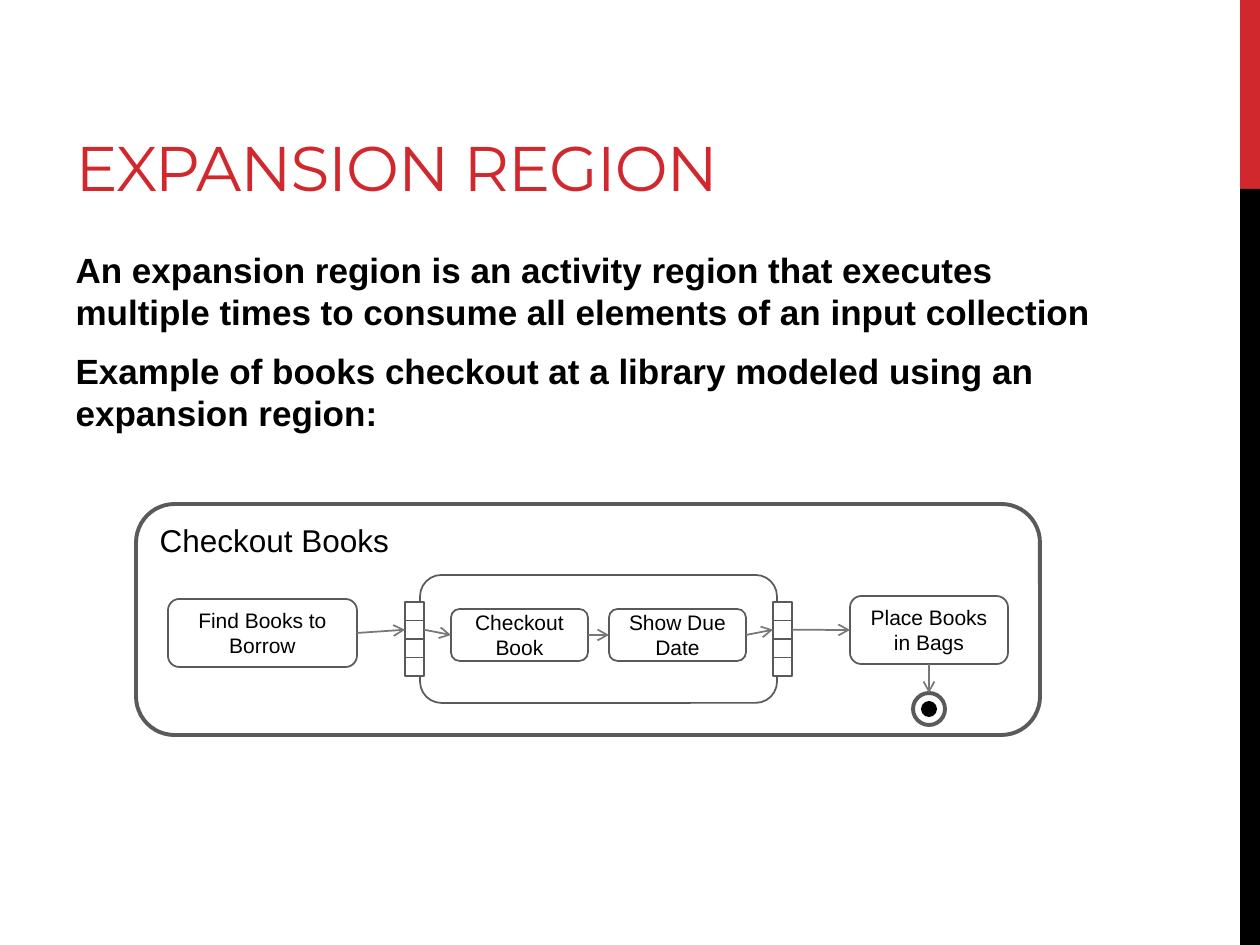
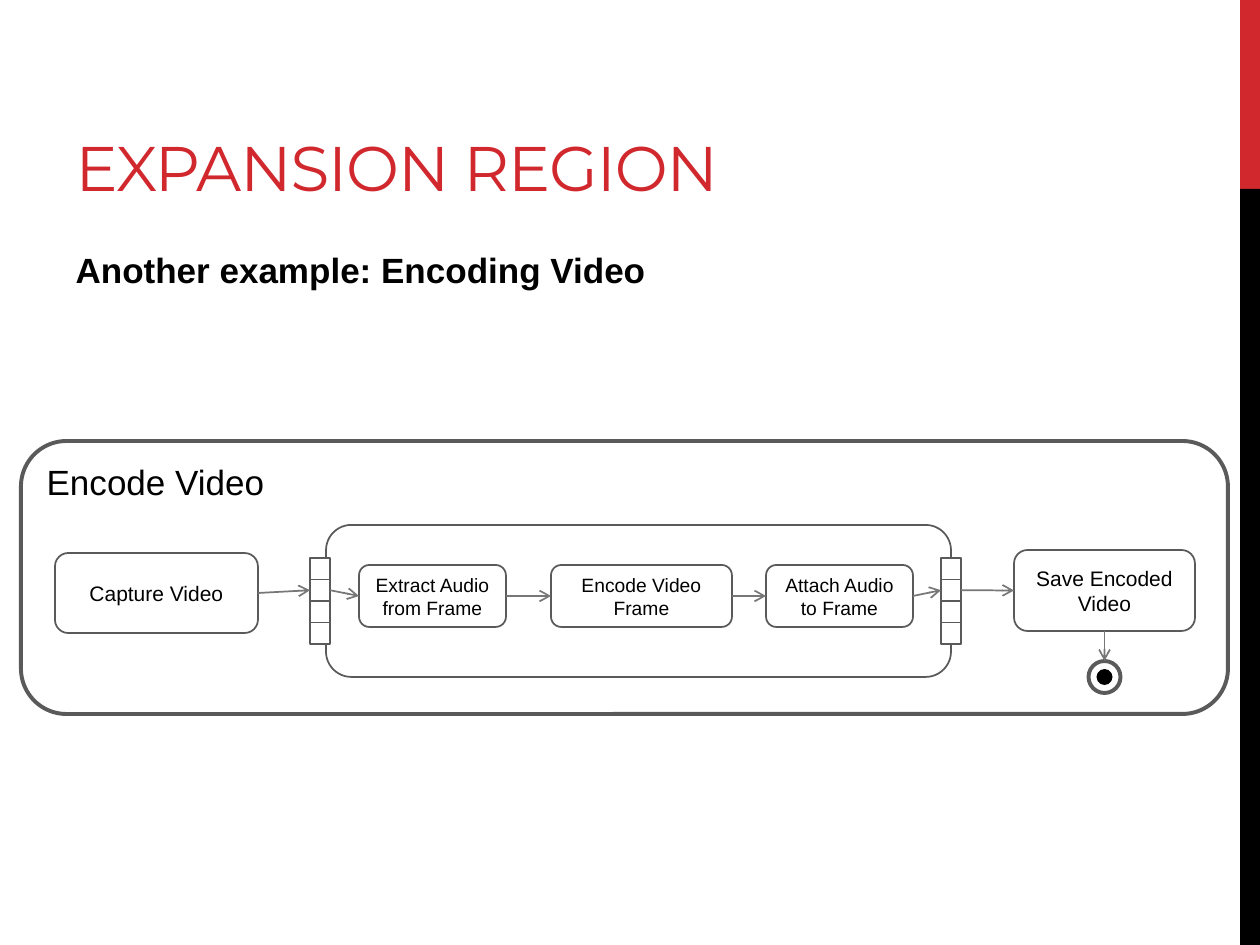
from dataclasses import dataclass
from itertools import pairwise

from lxml import etree
from pptx import Presentation
from pptx.dml.color import RGBColor
from pptx.enum.shapes import MSO_CONNECTOR, MSO_SHAPE
from pptx.enum.text import MSO_ANCHOR, MSO_AUTO_SIZE, PP_ALIGN
from pptx.oxml.ns import qn
from pptx.shapes.autoshape import Shape
from pptx.slide import Slide
from pptx.util import Emu, Pt

RED = RGBColor(0xD1, 0x28, 0x2E)
BLACK = RGBColor(0, 0, 0)
WHITE = RGBColor(0xFF, 0xFF, 0xFF)
OUTLINE = RGBColor(0x5A, 0x5A, 0x5A)
ARROW = RGBColor(0x77, 0x77, 0x77)

RECTANGLE = MSO_SHAPE.RECTANGLE
ROUNDED = MSO_SHAPE.ROUNDED_RECTANGLE
ELLIPSE = MSO_SHAPE.OVAL
STRAIGHT = MSO_CONNECTOR.STRAIGHT
TOP, MIDDLE, BOTTOM = MSO_ANCHOR.TOP, MSO_ANCHOR.MIDDLE, MSO_ANCHOR.BOTTOM
LEFT, CENTER = PP_ALIGN.LEFT, PP_ALIGN.CENTER
NO_FIT = MSO_AUTO_SIZE.NONE

TOP_SIDE, LEFT_SIDE, BOTTOM_SIDE, RIGHT_SIDE = range(4)
HEAVY, THIN = 2.25, 1
PIN_COUNT = 4
JOINED_PIN = 1
RING_SIZE, DOT_SIZE = 32, 16
TITLE = "EXPANSION REGION"
TITLE_FONT, TEXT_FONT = "Montserrat", "Arial"


@dataclass(frozen=True)
class Area:
    left: float
    top: float
    width: float
    height: float

    def emu(self) -> tuple[Emu, ...]:
        return tuple(px(v) for v in (self.left, self.top, self.width, self.height))


@dataclass(frozen=True)
class Action:
    label: str
    area: Area


@dataclass(frozen=True)
class Diagram:
    label: str
    label_size: int
    frame: Area
    source: Action
    region: Area
    input_pins: Area
    output_pins: Area
    steps: tuple[Action, ...]
    step_size: int
    target: Action
    ring_top: int


@dataclass(frozen=True)
class Content:
    statements: tuple[str, ...]
    body: Area
    diagram: Diagram


TITLE_AREA = Area(63, 21, 955, 189)
SIDE_BANDS = ((Area(1240, 0, 20, 189), RED), (Area(1240, 189, 20, 756), BLACK))

CONTENTS = (
    Content(
        (
            "An expansion region is an activity region that executes multiple times "
            "to consume all elements of an input collection",
            "Example of books checkout at a library modeled using an expansion region:",
        ),
        Area(63, 242, 1050, 168),
        Diagram(
            label="Checkout Books",
            label_size=18,
            frame=Area(136, 504, 904, 231),
            source=Action("Find Books to Borrow", Area(168, 599, 189, 68)),
            region=Area(420, 575, 357, 128),
            input_pins=Area(405, 602, 19, 74),
            output_pins=Area(773, 602, 19, 74),
            steps=(
                Action("Checkout Book", Area(451, 609, 137, 52)),
                Action("Show Due Date", Area(609, 609, 137, 52)),
            ),
            step_size=12,
            target=Action("Place Books in Bags", Area(850, 596, 158, 68)),
            ring_top=693,
        ),
    ),
    Content(
        ("Another example: Encoding Video",),
        Area(63, 242, 1050, 105),
        Diagram(
            label="Encode Video",
            label_size=20,
            frame=Area(21, 441, 1207, 273),
            source=Action("Capture Video", Area(55, 553, 203, 80)),
            region=Area(326, 525, 625, 152),
            input_pins=Area(310, 558, 20, 86),
            output_pins=Area(941, 558, 20, 86),
            steps=(
                Action("Extract Audio from Frame", Area(359, 565, 147, 62)),
                Action("Encode Video Frame", Area(551, 565, 181, 62)),
                Action("Attach Audio to Frame", Area(766, 565, 147, 62)),
            ),
            step_size=11,
            target=Action("Save Encoded Video", Area(1014, 550, 181, 81)),
            ring_top=661,
        ),
    ),
)


def px(value: float) -> Emu:
    return Emu(round(value * 914400 / 126))


def style_font(font, name: str, size: float, color: RGBColor, bold: bool = False) -> None:
    font.name = name
    font.size = Pt(size)
    font.color.rgb = color
    font.bold = bold


def place(box: Shape, area: Area) -> None:
    box.left, box.top, box.width, box.height = area.emu()


def draw_shape(page: Slide, kind: int, area: Area, fill: RGBColor | None = None,
               weight: float | None = None) -> Shape:
    box = page.shapes.add_shape(kind, *area.emu())
    box.shadow.inherit = False
    if fill is None:
        box.fill.background()
    else:
        box.fill.solid()
        box.fill.fore_color.rgb = fill
    if weight is None:
        box.line.fill.background()
    else:
        box.line.color.rgb = OUTLINE
        box.line.width = Pt(weight)
    return box


def write_label(box: Shape, text: str, size: int, align: int, anchor: int) -> None:
    frame = box.text_frame
    frame.word_wrap = True
    frame.vertical_anchor = anchor
    para = frame.paragraphs[0]
    para.text = text
    para.alignment = align
    style_font(para.font, TEXT_FONT, size, BLACK)


def draw_action(page: Slide, action: Action, size: int) -> Shape:
    box = draw_shape(page, ROUNDED, action.area, weight=THIN)
    write_label(box, action.label, size, CENTER, MIDDLE)
    return box


def draw_pins(page: Slide, column: Area) -> Shape:
    height = column.height / PIN_COUNT
    pins = [
        draw_shape(page, RECTANGLE,
                   Area(column.left, column.top + row * height, column.width, height),
                   WHITE, THIN)
        for row in range(PIN_COUNT)
    ]
    return pins[JOINED_PIN]


def draw_arrow(page: Slide, start: Shape, end: Shape,
               start_side: int = RIGHT_SIDE, end_side: int = LEFT_SIDE) -> None:
    arrow = page.shapes.add_connector(STRAIGHT, 0, 0, 0, 0)
    arrow.begin_connect(start, start_side)
    arrow.end_connect(end, end_side)
    arrow.line.color.rgb = ARROW
    arrow.line.width = Pt(THIN)
    etree.SubElement(arrow.line._get_or_add_ln(), qn("a:tailEnd"), type="arrow")
    etree.SubElement(arrow._element.spPr, qn("a:effectLst"))


def draw_final_node(page: Slide, center: float, top: float) -> Shape:
    ring = draw_shape(page, ELLIPSE,
                      Area(center - RING_SIZE / 2, top, RING_SIZE, RING_SIZE), weight=HEAVY)
    inset = (RING_SIZE - DOT_SIZE) / 2
    draw_shape(page, ELLIPSE,
               Area(center - DOT_SIZE / 2, top + inset, DOT_SIZE, DOT_SIZE), BLACK)
    return ring


def draw_diagram(page: Slide, diagram: Diagram) -> None:
    frame = draw_shape(page, ROUNDED, diagram.frame, weight=HEAVY)
    write_label(frame, diagram.label, diagram.label_size, LEFT, TOP)
    source = draw_action(page, diagram.source, 12)
    draw_shape(page, ROUNDED, diagram.region, weight=THIN)
    input_pin = draw_pins(page, diagram.input_pins)
    output_pin = draw_pins(page, diagram.output_pins)
    steps = [draw_action(page, step, diagram.step_size) for step in diagram.steps]
    target = draw_action(page, diagram.target, 12)
    for start, end in pairwise([source, input_pin, *steps, output_pin, target]):
        draw_arrow(page, start, end)
    target_area = diagram.target.area
    ring = draw_final_node(page, target_area.left + target_area.width / 2, diagram.ring_top)
    draw_arrow(page, target, ring, BOTTOM_SIDE, TOP_SIDE)


def write_title(page: Slide) -> None:
    title = page.shapes.title
    place(title, TITLE_AREA)
    frame = title.text_frame
    frame.auto_size = NO_FIT
    frame.vertical_anchor = BOTTOM
    para = frame.paragraphs[0]
    para.alignment = LEFT
    span = para.add_run()
    span.text = TITLE
    span._r.get_or_add_rPr().set("spc", "-60")
    style_font(para.font, TITLE_FONT, 36, RED)


def write_body(page: Slide, content: Content) -> None:
    body = page.placeholders[1]
    place(body, content.body)
    frame = body.text_frame
    frame.auto_size = NO_FIT
    for index, statement in enumerate(content.statements):
        para = frame.add_paragraph() if index else frame.paragraphs[0]
        para.text = statement
        para.space_before = Pt(4 if index else 0)
        para.space_after = Pt(6)
        properties = para._p.get_or_add_pPr()
        properties.set("marL", "0")
        properties.set("indent", "0")
        etree.SubElement(properties, qn("a:buNone"))
        style_font(para.font, TEXT_FONT, 20, BLACK, bold=True)


def main() -> None:
    deck = Presentation()
    deck.slide_width, deck.slide_height = px(1260), px(945)
    for content in CONTENTS:
        page = deck.slides.add_slide(deck.slide_layouts[1])
        for area, color in SIDE_BANDS:
            draw_shape(page, RECTANGLE, area, color)
        write_title(page)
        write_body(page, content)
        draw_diagram(page, content.diagram)
    deck.save("out.pptx")


if __name__ == "__main__":
    main()
